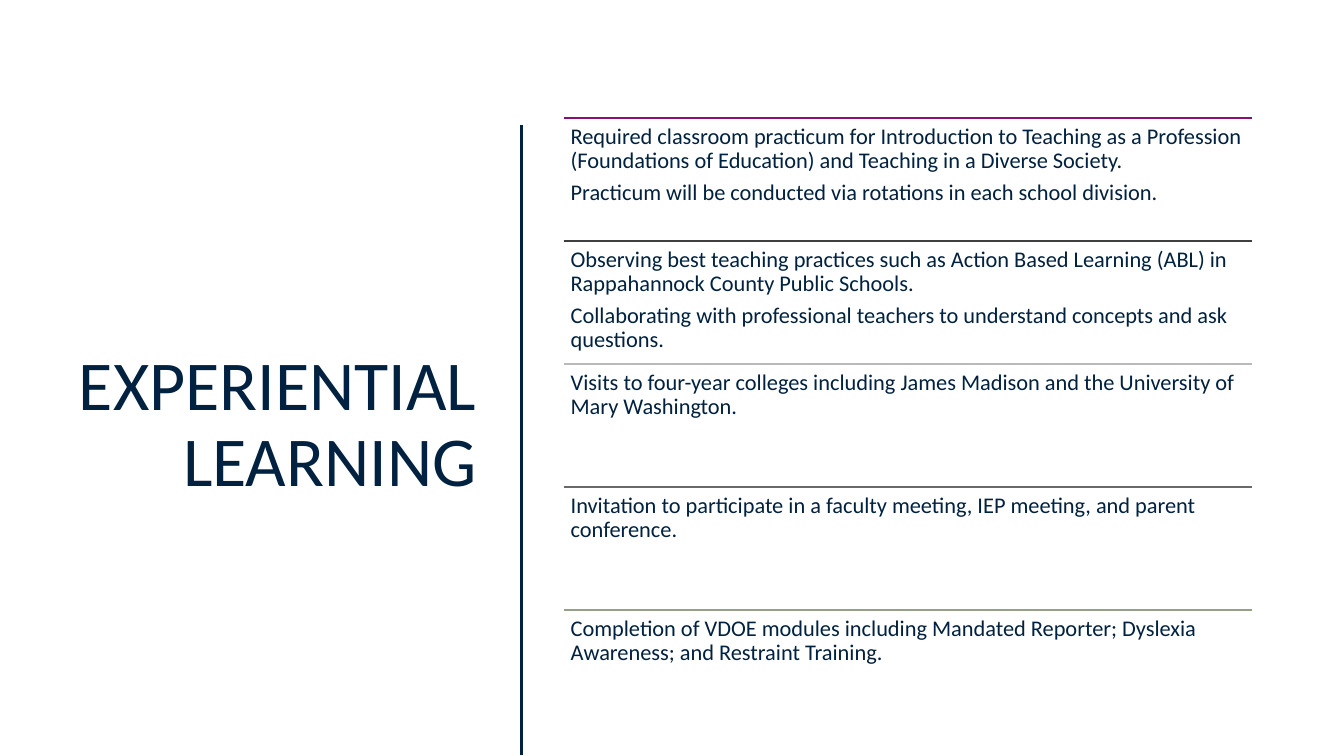
from dataclasses import dataclass

from lxml import etree
from pptx import Presentation
from pptx import util as u
from pptx.dml.color import RGBColor
from pptx.enum import shapes, text
from pptx.oxml.ns import qn

NAVY = "00213F"
FONT = "Calibri"
LIST_LEFT, LIST_TOP = 5.59, 1.17
LIST_WIDTH, ROW_HEIGHT = 6.83, 1.22
INSET = 0.07


@dataclass
class Row:
    color: str
    paragraphs: list[str]


ROWS = [
    Row("8A0F73", [
        "Required classroom practicum for Introduction to Teaching as a Profession "
        "(Foundations of Education) and Teaching in a Diverse Society.",
        "Practicum will be conducted via rotations in each school division.",
    ]),
    Row("3F3F3F", [
        "Observing best teaching practices such as Action Based Learning (ABL) in "
        "Rappahannock County Public Schools.",
        "Collaborating with professional teachers to understand concepts and ask questions.",
    ]),
    Row("BABABA", [
        "Visits to four-year colleges including James Madison and the University of "
        "Mary Washington.",
    ]),
    Row("696969", [
        "Invitation to participate in a faculty meeting, IEP meeting, and parent conference.",
    ]),
    Row("94A088", [
        "Completion of VDOE modules including Mandated Reporter; Dyslexia Awareness; "
        "and Restraint Training.",
    ]),
]


def rgb(color: str) -> RGBColor:
    return RGBColor.from_string(color)


def format_paragraph(p, size: float, align, after: float = 0) -> None:
    p.alignment = align
    p.line_spacing = 0.9
    p.space_after = u.Pt(after)
    for r in p.runs:
        r.font.name = FONT
        r.font.size = u.Pt(size)
        r.font.color.rgb = rgb(NAVY)


def add_line(s, x1: float, y1: float, x2: float, y2: float, color: str, width: float) -> None:
    line = s.shapes.add_connector(
        shapes.MSO_CONNECTOR.STRAIGHT,
        u.Inches(x1), u.Inches(y1), u.Inches(x2), u.Inches(y2))
    line.line.color.rgb = rgb(color)
    line.line.width = u.Pt(width)
    etree.SubElement(line._element.spPr, qn("a:effectLst"))


def add_title(s, title: str) -> None:
    sp = s.shapes.title
    sp.left, sp.top = u.Inches(0.52), u.Inches(1.17)
    sp.width, sp.height = u.Inches(4.31), u.Inches(6.11)
    tf = sp.text_frame
    tf.text = title
    tf.word_wrap = True
    tf.auto_size = text.MSO_AUTO_SIZE.NONE
    tf.vertical_anchor = text.MSO_ANCHOR.MIDDLE
    format_paragraph(tf.paragraphs[0], 50, text.PP_ALIGN.RIGHT)


def add_row(s, row: Row, top: float) -> None:
    add_line(s, LIST_LEFT, top, LIST_LEFT + LIST_WIDTH, top, row.color, 1)
    sp = s.shapes.add_textbox(
        u.Inches(LIST_LEFT), u.Inches(top), u.Inches(LIST_WIDTH), u.Inches(ROW_HEIGHT))
    tf = sp.text_frame
    tf.word_wrap = True
    tf.margin_left = tf.margin_right = tf.margin_top = tf.margin_bottom = u.Inches(INSET)
    tf.text = "\n".join(row.paragraphs)
    for p in tf.paragraphs:
        format_paragraph(p, 16, text.PP_ALIGN.LEFT, after=5.6)


def main() -> None:
    prs = Presentation()
    prs.slide_width, prs.slide_height = u.Inches(13.33), u.Inches(7.5)
    s = prs.slides.add_slide(prs.slide_layouts.get_by_name("Title Only"))

    # Title and divider
    add_title(s, "EXPERIENTIAL LEARNING")
    add_line(s, 5.17, 1.24, 5.17, 7.49, NAVY, 2)

    # Ruled list
    for i, row in enumerate(ROWS):
        add_row(s, row, LIST_TOP + i * ROW_HEIGHT)

    prs.save("out.pptx")


if __name__ == "__main__":
    main()
